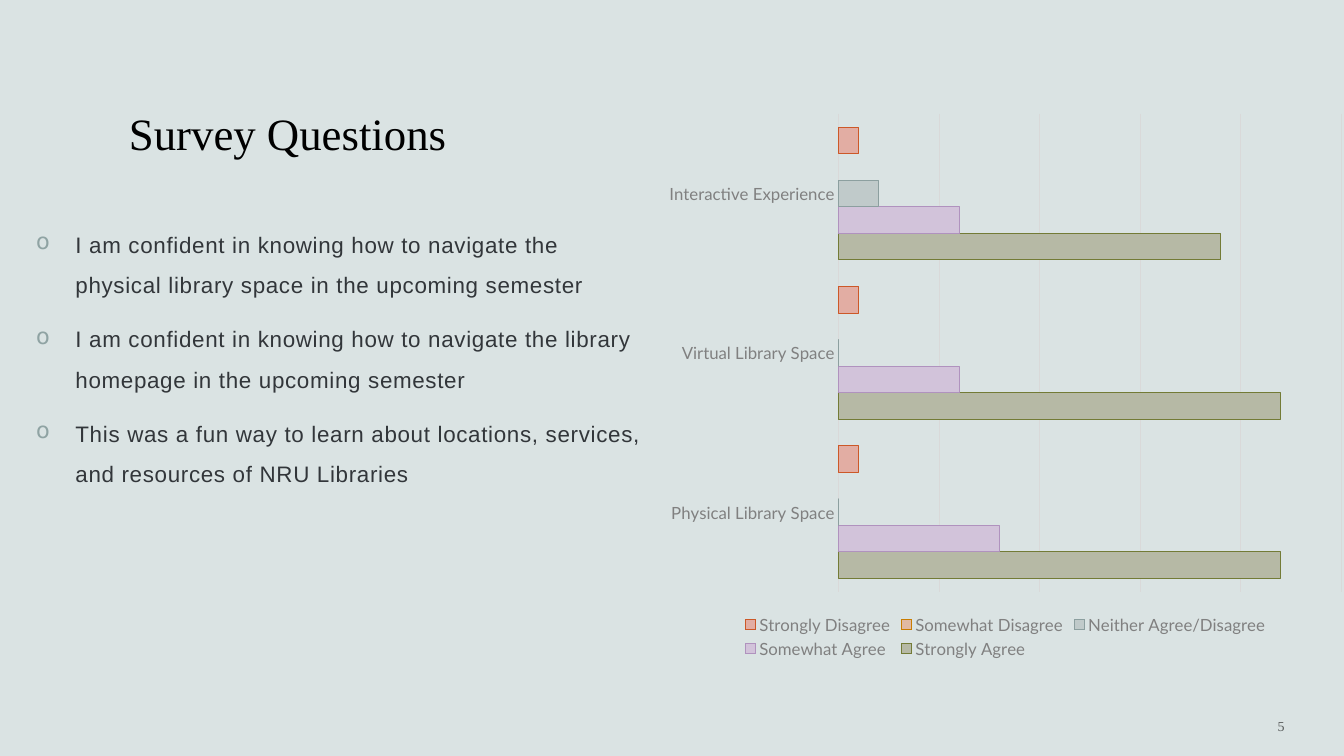
import pptx
import pptx.chart.data
import pptx.dml.color
import pptx.enum.chart
import pptx.enum.text
import pptx.oxml
import pptx.oxml.ns
import pptx.util
from pptx.util import Inches

BACKGROUND = "DAE3E3"
GREY = "808080"
RULE = "D9D9D9"
STATEMENTS = [
    "I am confident in knowing how to navigate the physical library space in the upcoming semester",
    "I am confident in knowing how to navigate the library homepage in the upcoming semester",
    "This was a fun way to learn about locations, services, and resources of NRU Libraries",
]
TOPICS = ["Physical Library Space", "Virtual Library Space", "Interactive Experience"]
ANSWERS = [  # name, responses per topic, fill, outline
    ("Strongly Agree", (22, 22, 19), "B6B9A5", "737B36"),
    ("Somewhat Agree", (8, 6, 6), "D2C3DA", "B092BE"),
    ("Neither Agree/Disagree", (0, 0, 2), "C0CACA", "8C9F9F"),
    ("Somewhat Disagree", (None, None, None), "E1B9A2", "C97C01"),
    ("Strongly Disagree", (1, 1, 1), "E2ADA3", "CC5828"),
]


def color(value):
    return pptx.dml.color.RGBColor.from_string(value)


def xml(text):
    """Parse one DrawingML element written with the a: prefix."""
    start, rest = text.split(">", 1)
    slash = "/" if start.endswith("/") else ""
    start = start.rstrip("/")
    return pptx.oxml.parse_xml(f"{start} {pptx.oxml.ns.nsdecls('a')}{slash}>{rest}")


def style_font(font, size, value, name):
    font.size = pptx.util.Pt(size)
    font.color.rgb = color(value)
    font.name = name


def style_line(line, value):
    line.color.rgb = color(value)
    line.width = pptx.util.Pt(0.75)


def add_frame(page, area, anchor):
    box = page.shapes.add_textbox(*map(Inches, area))
    frame = box.text_frame
    frame.word_wrap = True
    frame.vertical_anchor = anchor
    return frame


def add_span(para, text, size, value, name, spacing=0):
    """Add a run; spacing is the letter spacing in points."""
    span = para.add_run()
    span.text = text
    style_font(span.font, size, value, name)
    if spacing:
        span.font._element.set("spc", str(int(spacing * 100)))
    return span


def add_title(page, area):
    frame = add_frame(page, area, pptx.enum.text.MSO_ANCHOR.BOTTOM)
    add_span(frame.paragraphs[0], "Survey Questions", 32, "000000", "Times New Roman")


def add_statements(page, area):
    frame = add_frame(page, area, pptx.enum.text.MSO_ANCHOR.TOP)
    for index, statement in enumerate(STATEMENTS):
        para = frame.add_paragraph() if index else frame.paragraphs[0]
        para.line_spacing = 1.5
        para.space_before = pptx.util.Pt(10)
        properties = para._p.get_or_add_pPr()
        properties.set("marL", str(Inches(0.39)))
        properties.set("indent", str(-Inches(0.39)))
        properties.append(xml('<a:buClr><a:srgbClr val="8FA3A3"/></a:buClr>'))
        properties.append(xml('<a:buChar char="o"/>'))
        add_span(para, statement, 16, "32363A", "Arial", 0.5)


def add_page_number(page, area):
    frame = add_frame(page, area, pptx.enum.text.MSO_ANCHOR.MIDDLE)
    para = frame.paragraphs[0]
    para.alignment = pptx.enum.text.PP_ALIGN.RIGHT
    span = add_span(para, "5", 10, "000000", "Times New Roman", 2)
    fill = span.font._element.find(pptx.oxml.ns.qn("a:solidFill"))
    fill[0].append(xml('<a:alpha val="60000"/>'))


def add_answer_chart(page, area):
    data = pptx.chart.data.CategoryChartData()
    data.categories = TOPICS
    for name, responses, _, _ in ANSWERS:
        data.add_series(name, responses)
    kind = pptx.enum.chart.XL_CHART_TYPE.BAR_CLUSTERED
    chart = page.shapes.add_chart(kind, *map(Inches, area), data).chart
    chart.has_title = False
    style_font(chart.font, 10, "000000", "Lato")

    plot = chart.plots[0]
    plot.gap_width = 100
    plot.overlap = 0
    plot.vary_by_categories = False
    for series, (_, _, fill, outline) in zip(plot.series, ANSWERS):
        series.invert_if_negative = False
        series.format.fill.solid()
        series.format.fill.fore_color.rgb = color(fill)
        style_line(series.format.line, outline)

    topics = chart.category_axis
    topics.major_tick_mark = pptx.enum.chart.XL_TICK_MARK.NONE
    style_font(topics.tick_labels.font, 12, GREY, "Lato")
    style_line(topics.format.line, RULE)

    scale = chart.value_axis
    scale.visible = False
    scale.minimum_scale = 0
    scale.maximum_scale = 25
    scale.major_unit = 5
    scale.has_major_gridlines = True
    style_line(scale.major_gridlines.format.line, RULE)

    chart.has_legend = True
    chart.legend.position = pptx.enum.chart.XL_LEGEND_POSITION.BOTTOM
    chart.legend.include_in_layout = False
    style_font(chart.legend.font, 12, GREY, "Lato")


def main():
    deck = pptx.Presentation()
    deck.slide_width = Inches(13.33)
    deck.slide_height = Inches(7.5)
    page = deck.slides.add_slide(deck.slide_layouts[6])
    page.background.fill.solid()
    page.background.fill.fore_color.rgb = color(BACKGROUND)
    add_title(page, (1.18, 0.41, 11.17, 1.22))
    add_statements(page, (0.26, 2.11, 6.24, 3.97))
    add_page_number(page, (10.92, 6.95, 1.92, 0.5))
    add_answer_chart(page, (6.5, 1.02, 6.94, 5.55))
    deck.save("out.pptx")


if __name__ == "__main__":
    main()
